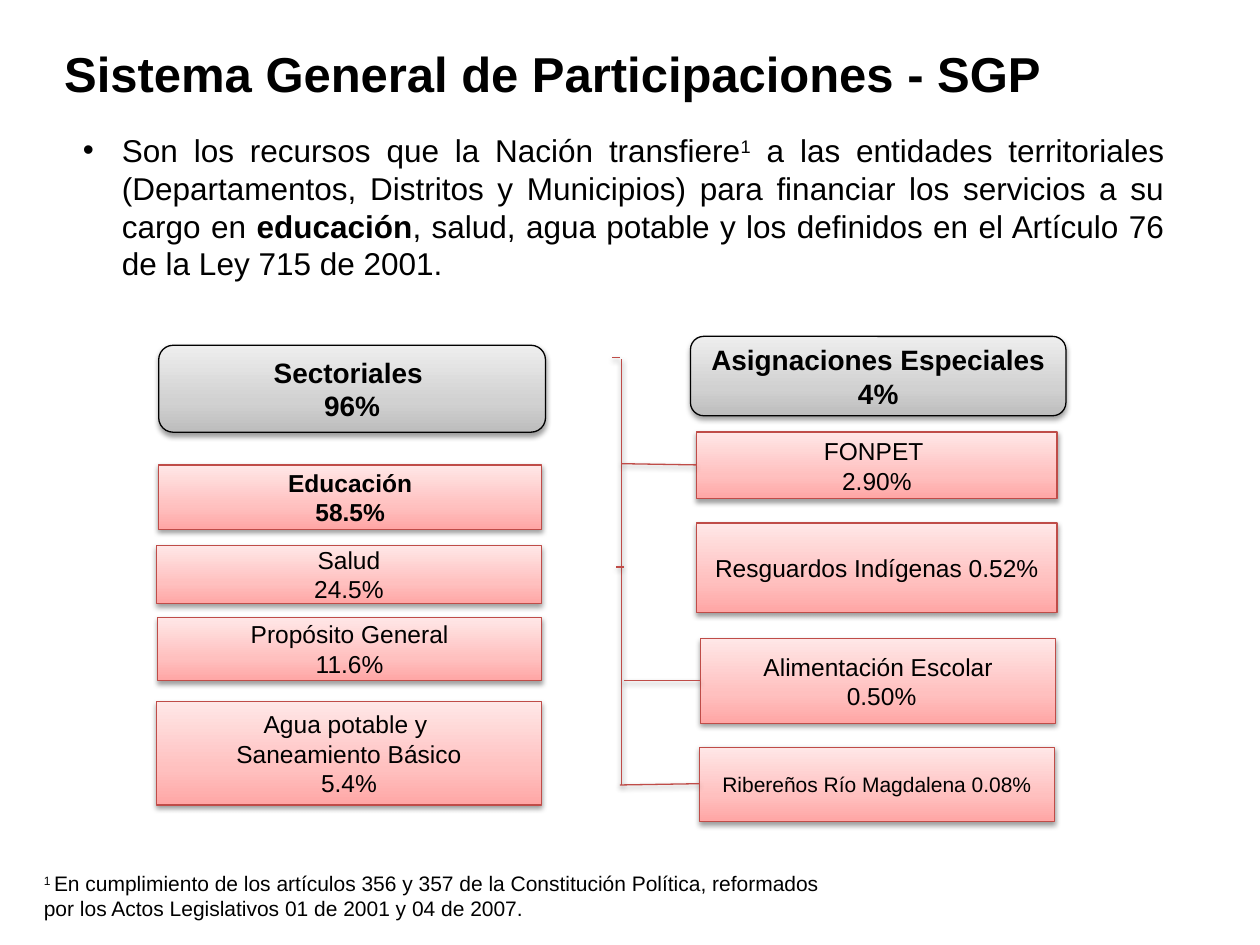
"""Build the slide on the Sistema General de Participaciones."""
from copy import deepcopy
from typing import NamedTuple

from lxml import etree
from pptx import Presentation
from pptx.dml.color import RGBColor
from pptx.enum import shapes, text
from pptx.oxml import ns
from pptx.util import Inches, Pt

BLACK = "000000"
RED = "BF4C48"
STOPS = (0, 0.35, 1)


class Look(NamedTuple):
    outline: shapes.MSO_SHAPE
    gradient: tuple[str, str, str]
    border: str


class Box(NamedTuple):
    left: float
    top: float
    width: float
    height: float
    label: str
    look: Look
    size: int = 14
    bold: bool = False


class Line(NamedTuple):
    x1: float
    y1: float
    x2: float
    y2: float


class Piece(NamedTuple):
    words: str
    bold: bool = False
    raised: bool = False


HEADING = Look(shapes.MSO_SHAPE.ROUNDED_RECTANGLE, ("BDBDBD", "D1D1D1", "EEEEEE"), BLACK)
SHARE = Look(shapes.MSO_SHAPE.RECTANGLE, ("FFA6A5", "FFC0BF", "FFE7E7"), RED)

BOXES = [
    Box(1.26, 2.74, 3.07, 0.69, "Sectoriales \n96%", HEADING, 16, True),
    Box(5.48, 2.67, 2.98, 0.63, "Asignaciones Especiales 4%", HEADING, 16, True),
    Box(1.26, 3.69, 3.04, 0.51, "Educación\n58.5%", SHARE, bold=True),
    Box(1.24, 4.33, 3.06, 0.46, "Salud\n24.5%", SHARE),
    Box(1.25, 4.9, 3.05, 0.5, "Propósito General\n11.6%", SHARE),
    Box(1.24, 5.57, 3.06, 0.82, "Agua potable y \nSaneamiento Básico\n5.4%", SHARE),
    Box(5.53, 3.43, 2.86, 0.53, "FONPET \n2.90%", SHARE),
    Box(5.53, 4.15, 2.86, 0.71, "Resguardos Indígenas 0.52%", SHARE),
    Box(5.56, 5.07, 2.82, 0.67, "Alimentación Escolar\n 0.50%", SHARE),
    Box(5.55, 5.93, 2.82, 0.59, "Ribereños Río Magdalena 0.08%", SHARE, 12),
]

BRACKET = [
    Line(4.93, 2.85, 4.93, 6.23),
    Line(4.89, 4.5, 4.95, 4.5),
    Line(5.53, 3.69, 4.93, 3.68),
    Line(5.56, 5.4, 4.95, 5.4),
    Line(5.55, 6.22, 4.92, 6.23),
    Line(4.86, 2.84, 4.92, 2.84),
]

DEFINITION = [
    Piece("Son los recursos que la Nación transfiere"),
    Piece("1", raised=True),
    Piece(" a las entidades territoriales (Departamentos, Distritos y Municipios) "
          "para financiar los servicios a su cargo en "),
    Piece("educación", bold=True),
    Piece(", salud, agua potable y los definidos en el Artículo 76 de la Ley 715 de 2001."),
]

FOOTNOTE = [
    Piece("1 ", raised=True),
    Piece("En cumplimiento de los artículos 356 y 357 de la Constitución Política, "
          "reformados por los Actos Legislativos 01 de 2001 y 04 de 2007."),
]


def paint(color_format, value: str) -> None:
    color_format.rgb = RGBColor.from_string(value)


def style_font(font, size: int, bold: bool = False) -> None:
    font.name = "Arial"
    font.size = Pt(size)
    font.bold = bold
    paint(font.color, BLACK)


def style_line(line, value: str) -> None:
    line.width = Pt(0.75)
    paint(line.color, value)


def add_shadow(effects) -> None:
    shadow = etree.SubElement(effects, ns.qn("a:outerShdw"), blurRad=str(Pt(3.1)),
                              dist=str(Pt(1.6)), dir="5400000", rotWithShape="0")
    tint = etree.SubElement(shadow, ns.qn("a:srgbClr"), val=BLACK)
    etree.SubElement(tint, ns.qn("a:alpha"), val="38000")


def fill_gradient(shape, colors: tuple[str, str, str]) -> None:
    shape.fill.gradient()
    shape.fill.gradient_angle = 90
    stop_list = shape.element.spPr.find(".//" + ns.qn("a:gsLst"))
    stop_list.append(deepcopy(stop_list[0]))
    for stop, position, value in zip(shape.fill.gradient_stops, STOPS, colors):
        stop.position = position
        paint(stop.color, value)


def draw_box(slide, box: Box) -> None:
    shape = slide.shapes.add_shape(box.look.outline, Inches(box.left), Inches(box.top),
                                   Inches(box.width), Inches(box.height))
    fill_gradient(shape, box.look.gradient)
    style_line(shape.line, box.look.border)
    shape.shadow.inherit = False
    add_shadow(shape.element.spPr.find(ns.qn("a:effectLst")))
    frame = shape.text_frame
    frame.text = box.label
    frame.vertical_anchor = text.MSO_ANCHOR.MIDDLE
    for paragraph in frame.paragraphs:
        paragraph.alignment = text.PP_ALIGN.CENTER
        for run in paragraph.runs:
            style_font(run.font, box.size, box.bold)


def draw_line(slide, line: Line) -> None:
    connector = slide.shapes.add_connector(
        shapes.MSO_CONNECTOR.STRAIGHT, *(Inches(value) for value in line))
    style_line(connector.line, RED)
    add_shadow(etree.SubElement(connector.element.spPr, ns.qn("a:effectLst")))


def write_passage(slide, left: float, top: float, width: float, height: float,
                  pieces: list[Piece], size: int):
    passage = slide.shapes.add_textbox(Inches(left), Inches(top), Inches(width), Inches(height))
    frame = passage.text_frame
    frame.word_wrap = True
    frame.auto_size = text.MSO_AUTO_SIZE.SHAPE_TO_FIT_TEXT
    paragraph = frame.paragraphs[0]
    for piece in pieces:
        run = paragraph.add_run()
        run.text = piece.words
        style_font(run.font, size, piece.bold)
        if piece.raised:
            run.font._element.set("baseline", "30000")
    return paragraph


def add_bullet(paragraph) -> None:
    properties = paragraph._p.get_or_add_pPr()
    properties.set("marL", str(Inches(0.31)))
    properties.set("indent", str(Inches(-0.31)))
    etree.SubElement(properties, ns.qn("a:buFont"), typeface="Arial")
    etree.SubElement(properties, ns.qn("a:buChar"), char="•")


def write_title(slide, words: str) -> None:
    title = slide.shapes.title
    title.left, title.top = Inches(0.41), Inches(0.13)
    title.width, title.height = Inches(9), Inches(0.9)
    frame = title.text_frame
    frame.text = words
    frame.vertical_anchor = text.MSO_ANCHOR.MIDDLE
    frame.paragraphs[0].alignment = text.PP_ALIGN.LEFT
    style_font(frame.paragraphs[0].runs[0].font, 28, True)


def main() -> None:
    deck = Presentation()
    deck.slide_width, deck.slide_height = Inches(10), Inches(7.5)
    slide = deck.slides.add_slide(deck.slide_layouts[5])
    write_title(slide, "Sistema General de Participaciones - SGP")
    for box in BOXES:
        draw_box(slide, box)
    for line in BRACKET:
        draw_line(slide, line)
    definition = write_passage(slide, 0.56, 0.99, 8.78, 1.31, DEFINITION, 18)
    definition.alignment = text.PP_ALIGN.JUSTIFY
    add_bullet(definition)
    write_passage(slide, 0.25, 6.86, 6.4, 0.5, FOOTNOTE, 12)
    deck.save("out.pptx")


if __name__ == "__main__":
    main()
